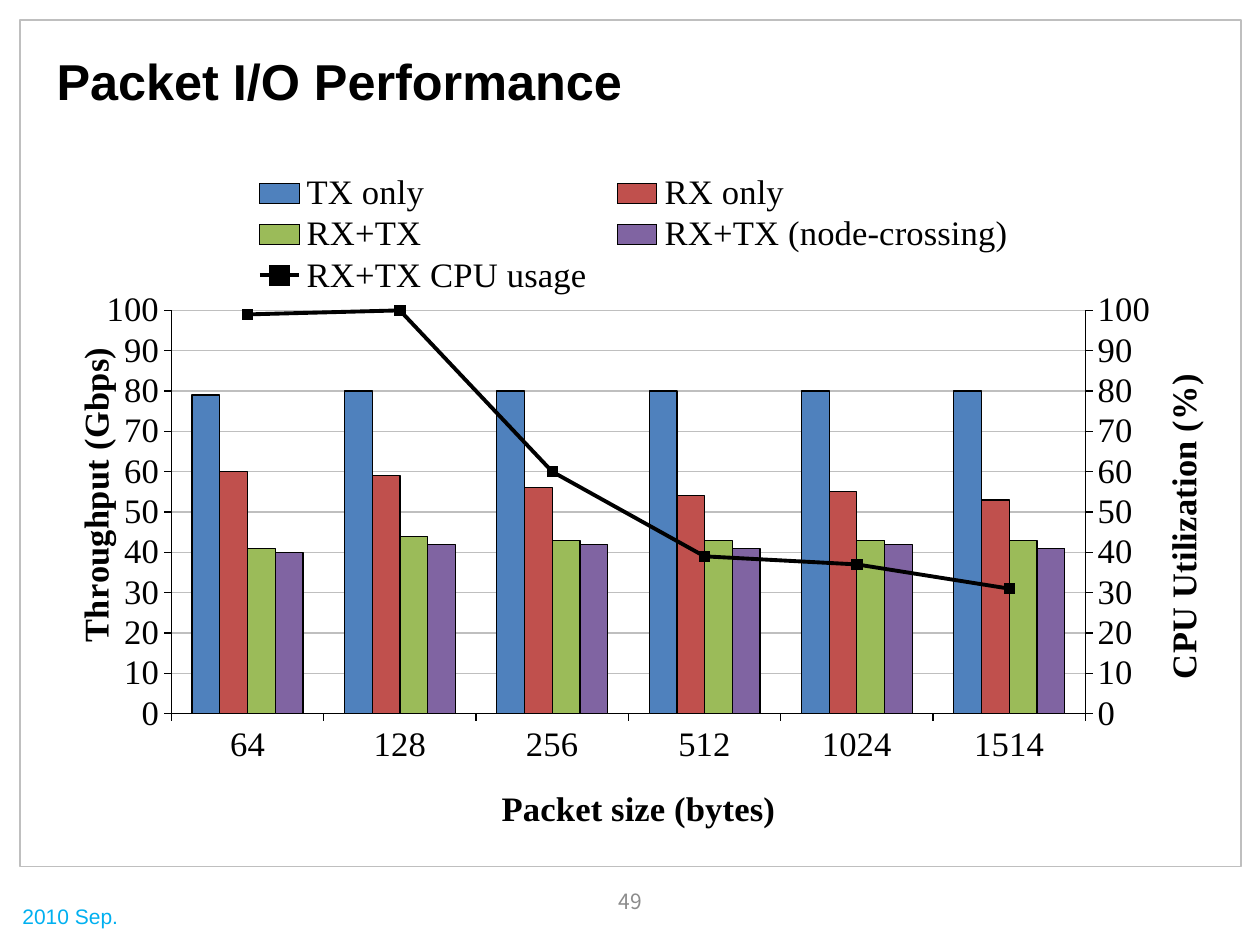
from copy import deepcopy

from lxml import etree
from pptx import Presentation
from pptx.chart.axis import ValueAxis
from pptx.chart.data import CategoryChartData
from pptx.dml.color import RGBColor
from pptx.enum.chart import XL_CHART_TYPE, XL_LEGEND_POSITION, XL_MARKER_STYLE, XL_TICK_MARK
from pptx.enum.shapes import MSO_SHAPE
from pptx.enum.text import MSO_ANCHOR, PP_ALIGN
from pptx.oxml.ns import qn
from pptx.util import Inches, Pt

BLACK = RGBColor(0x00, 0x00, 0x00)
RULE_GRAY = RGBColor(0xBF, 0xBF, 0xBF)
NUMBER_GRAY = RGBColor(0x8C, 0x8C, 0x8C)
DATE_BLUE = RGBColor(0x00, 0xB0, 0xF0)
BAR_COLORS = [
    RGBColor(0x4F, 0x81, 0xBD),
    RGBColor(0xC0, 0x50, 0x4D),
    RGBColor(0x9B, 0xBB, 0x59),
    RGBColor(0x80, 0x64, 0xA2),
]

PACKET_SIZES = ["64", "128", "256", "512", "1024", "1514"]
THROUGHPUT = {
    "TX only": [79, 80, 80, 80, 80, 80],
    "RX only": [60, 59, 56, 54, 55, 53],
    "RX+TX": [41, 44, 43, 43, 43, 43],
    "RX+TX (node-crossing)": [40, 42, 42, 41, 42, 41],
}
CPU_USAGE = [99, 100, 60, 39, 37, 31]


def add_xml(parent, tag, **attributes):
    return etree.SubElement(parent, qn(tag), attributes)


def remove_children(element, tag):
    for child in element.findall(qn(tag)):
        element.remove(child)


def place(element, index, inner=False, **fractions):
    """Give a chart part a manual layout, in fractions of the chart."""
    remove_children(element, "c:layout")
    layout = etree.Element(qn("c:layout"))
    element.insert(index, layout)
    manual = add_xml(layout, "c:manualLayout")
    if inner:
        add_xml(manual, "c:layoutTarget", val="inner")
    for key in ("x", "y"):
        add_xml(manual, f"c:{key}Mode", val="edge")
    for key, value in fractions.items():
        add_xml(manual, f"c:{key}", val=str(value))


def set_line(line, color, width=0.75):
    line.color.rgb = color
    line.width = Pt(width)


class SlideBuilder:
    axis_font = "Times New Roman"
    axis_size = Pt(20)

    def __init__(self, slide):
        self.slide = slide

    def frame(self, left, top, width, height):
        border = self.slide.shapes.add_shape(
            MSO_SHAPE.RECTANGLE, Inches(left), Inches(top), Inches(width), Inches(height))
        border.shadow.inherit = False
        border.fill.background()
        set_line(border.line, RULE_GRAY)

    def text(self, words, box, size, color, font="Arial", bold=False,
             align=PP_ALIGN.LEFT, anchor=MSO_ANCHOR.MIDDLE, wrap=True):
        frame = self.slide.shapes.add_textbox(*map(Inches, box)).text_frame
        frame.word_wrap = wrap
        frame.vertical_anchor = anchor
        paragraph = frame.paragraphs[0]
        paragraph.alignment = align
        run = paragraph.add_run()
        run.text = words
        run.font.name, run.font.size, run.font.bold = font, Pt(size), bold
        run.font.color.rgb = color

    def axis_title(self, axis, words, x, y, upright=False):
        title = axis.axis_title
        frame = title.text_frame
        frame.clear()
        run = frame.paragraphs[0].add_run()
        run.text = words
        run.font.name, run.font.size, run.font.bold = self.axis_font, self.axis_size, True
        run.font.color.rgb = BLACK
        if upright:
            body = title._element.find(f".//{qn('a:bodyPr')}")
            body.set("rot", "-5400000")
            body.set("vert", "horz")
        place(title._element, 1, x=x, y=y)

    def move_to_right_axis(self, chart):
        """Turn the last bar series into a line on a second value axis."""
        bars = chart._chartSpace.find(f".//{qn('c:barChart')}")
        series = bars.findall(qn("c:ser"))[-1]
        remove_children(series, "c:invertIfNegative")

        lines = etree.Element(qn("c:lineChart"))
        add_xml(lines, "c:grouping", val="standard")
        add_xml(lines, "c:varyColors", val="0")
        lines.append(series)
        add_xml(lines, "c:marker", val="1")
        bars.addnext(lines)

        hidden = deepcopy(chart.category_axis._element)
        right = deepcopy(chart.value_axis._element)
        chart.value_axis._element.addnext(right)
        right.addnext(hidden)
        for axis, own, other in ((hidden, "5001", "5002"), (right, "5002", "5001")):
            axis.find(qn("c:axId")).set("val", own)
            axis.find(qn("c:crossAx")).set("val", other)
            add_xml(lines, "c:axId", val=own)
        hidden.find(qn("c:delete")).set("val", "1")
        right.find(qn("c:axPos")).set("val", "r")
        right.find(qn("c:crosses")).set("val", "max")
        right_axis = ValueAxis(right)
        right_axis.has_major_gridlines = False
        return right_axis

    def throughput_chart(self, left, top, width, height):
        data = CategoryChartData()
        data.categories = PACKET_SIZES
        for name, values in THROUGHPUT.items():
            data.add_series(name, values)
        data.add_series("RX+TX CPU usage", CPU_USAGE)
        chart = self.slide.shapes.add_chart(
            XL_CHART_TYPE.COLUMN_CLUSTERED, Inches(left), Inches(top),
            Inches(width), Inches(height), data).chart
        chart.has_title = False
        chart.font.name, chart.font.size = self.axis_font, self.axis_size
        chart.font.color.rgb = BLACK

        # Axes
        packet_axis, gbps_axis = chart.category_axis, chart.value_axis
        for axis in (packet_axis, gbps_axis):
            axis.major_tick_mark = XL_TICK_MARK.OUTSIDE
            axis.minor_tick_mark = XL_TICK_MARK.NONE
            set_line(axis.format.line, BLACK)
        gbps_axis.minimum_scale, gbps_axis.maximum_scale = 0, 100
        gbps_axis.major_unit = 10
        set_line(gbps_axis.major_gridlines.format.line, RULE_GRAY)
        cpu_axis = self.move_to_right_axis(chart)
        self.axis_title(packet_axis, "Packet size (bytes)", 0.39, 0.93)
        self.axis_title(gbps_axis, "Throughput (Gbps)", 0.02, 0.27, upright=True)
        self.axis_title(cpu_axis, "CPU Utilization (%)", 0.96, 0.31, upright=True)

        # Series
        bar_plot, line_plot = chart.plots
        bar_plot.gap_width, bar_plot.overlap = 150, 0
        bar_plot.vary_by_categories = False
        for bars, color in zip(bar_plot.series, BAR_COLORS):
            bars.format.fill.solid()
            bars.format.fill.fore_color.rgb = color
            set_line(bars.format.line, BLACK)
        cpu_line = line_plot.series[0]
        cpu_line.smooth = False
        set_line(cpu_line.format.line, BLACK, 2.25)
        cpu_line.marker.style, cpu_line.marker.size = XL_MARKER_STYLE.SQUARE, 6
        cpu_line.marker.format.fill.solid()
        cpu_line.marker.format.fill.fore_color.rgb = BLACK
        set_line(cpu_line.marker.format.line, BLACK)

        # Legend and plot area
        chart.has_legend = True
        chart.legend.position = XL_LEGEND_POSITION.BOTTOM
        chart.legend.include_in_layout = False
        place(chart.legend._element, 1, x=0.17, y=0.01, w=0.68, h=0.19)
        plot_area = chart._chartSpace.find(f".//{qn('c:plotArea')}")
        place(plot_area, 0, inner=True, x=0.11, y=0.22, w=0.79, h=0.61)


def main():
    deck = Presentation()
    deck.slide_width, deck.slide_height = Inches(10), Inches(7.5)
    builder = SlideBuilder(deck.slides.add_slide(deck.slide_layouts[6]))

    # Frame and footer
    builder.frame(0.16, 0.16, 9.69, 6.72)
    builder.text("2010 Sep.", (0.08, 6.92, 0.97, 0.5), 12, DATE_BLUE,
                 anchor=MSO_ANCHOR.BOTTOM, wrap=False)
    builder.text("49", (3.84, 6.95, 2.33, 0.4), 12, NUMBER_GRAY,
                 font="Noto Sans CJK KR", align=PP_ALIGN.CENTER)

    # Title and chart
    builder.text("Packet I/O Performance", (0.35, 0.36, 9.29, 0.55), 28.8, BLACK, bold=True)
    builder.throughput_chart(0.35, 1.31, 9.29, 5.35)

    deck.save("out.pptx")


if __name__ == "__main__":
    main()
